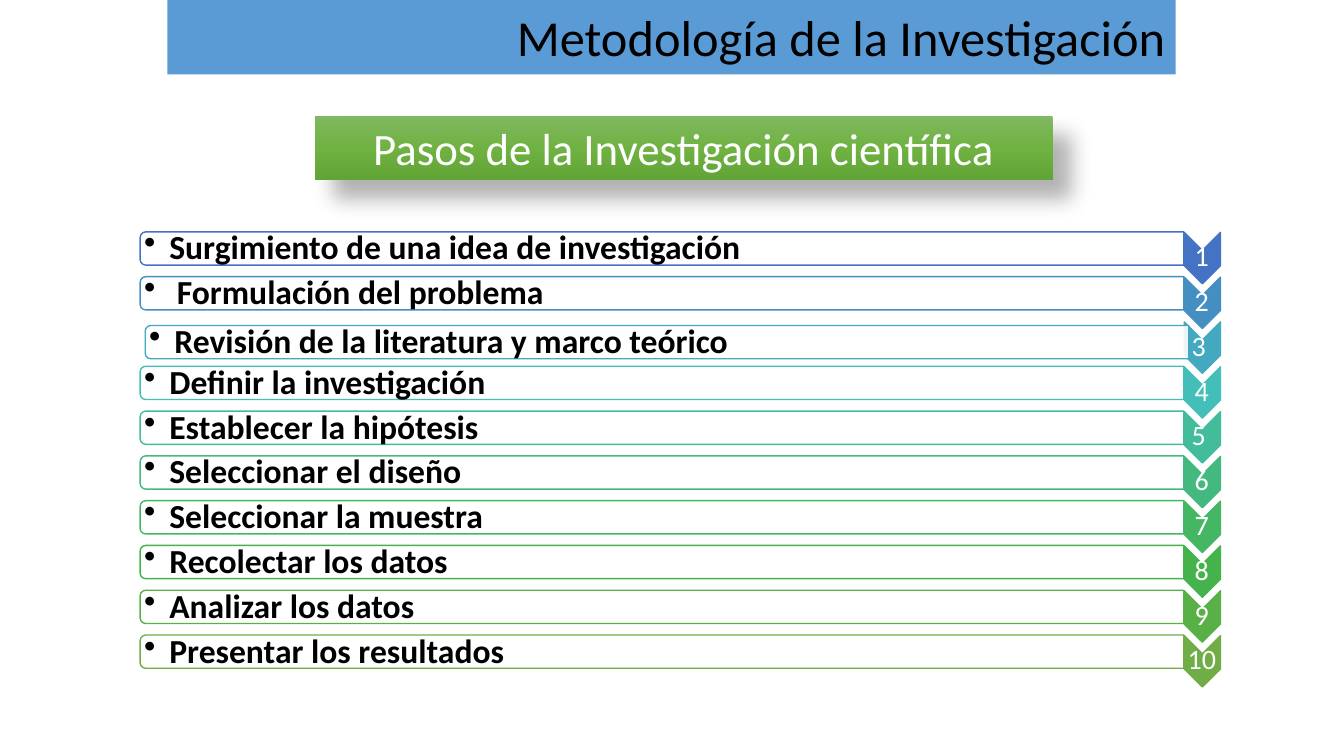
from lxml.etree import SubElement
from pptx import Presentation
from pptx.dml.color import RGBColor
from pptx.enum.shapes import MSO_SHAPE
from pptx.enum.text import MSO_ANCHOR, PP_ALIGN
from pptx.oxml import parse_xml
from pptx.oxml.ns import nsdecls, qn
from pptx.util import Inches, Pt


def color(code):
    return RGBColor.from_string(code)


class Deck:
    font = "Calibri"

    def __init__(self, wide, high):
        self.prs = Presentation()
        self.prs.slide_width = Inches(wide)
        self.prs.slide_height = Inches(high)
        self.slide = self.prs.slides.add_slide(self.prs.slide_layouts[6])

    def shape(self, kind, box, fill, line=None, turn=0, alpha=None):
        item = self.slide.shapes.add_shape(kind, *map(Inches, box))
        item.shadow.inherit = False
        item.rotation = turn
        item.fill.solid()
        item.fill.fore_color.rgb = color(fill)
        if alpha:
            tint = item.fill._xPr.find(qn("a:solidFill"))[0]
            SubElement(tint, qn("a:alpha"), val=str(alpha * 1000))
        if line:
            item.line.color.rgb = color(line)
            item.line.width = Pt(1)
        else:
            item.line.fill.background()
        return item

    def box(self, place, inset):
        item = self.slide.shapes.add_textbox(*map(Inches, place))
        frame = item.text_frame
        (frame.margin_left, frame.margin_top,
         frame.margin_right, frame.margin_bottom) = map(Inches, inset)
        return item

    def text(self, item, runs, size, ink, align, anchor=MSO_ANCHOR.MIDDLE):
        frame = item.text_frame
        frame.word_wrap = True
        frame.vertical_anchor = anchor
        para = frame.paragraphs[0]
        para.alignment = align
        for words, bold in runs:
            run = para.add_run()
            run.text = words
            run.font.name = self.font
            run.font.size = Pt(size)
            run.font.bold = bold
            run.font.color.rgb = color(ink)
        return para

    def bullet(self, para):
        para.level = 1
        props = para._p.get_or_add_pPr()
        props.set("marL", str(Inches(0.25)))
        props.set("indent", str(Inches(-0.25)))
        SubElement(props, qn("a:buChar"), char="•")

    def blend(self, item, stops):
        marks = "".join(f'<a:gs pos="{pos * 1000}"><a:srgbClr val="{code}"/></a:gs>'
                        for pos, code in stops)
        props = item._element.spPr
        props.replace(props.find(qn("a:solidFill")), parse_xml(
            f'<a:gradFill {nsdecls("a")}><a:gsLst>{marks}</a:gsLst>'
            '<a:lin ang="5400000" scaled="0"/></a:gradFill>'))

    def shade(self, item, blur, dist, alpha):
        cast = SubElement(item._element.spPr.find(qn("a:effectLst")), qn("a:outerShdw"),
                          blurRad=str(Pt(blur)), dist=str(Pt(dist)), dir="2700000",
                          algn="tl", rotWithShape="0")
        tint = SubElement(cast, qn("a:srgbClr"), val="000000")
        SubElement(tint, qn("a:alpha"), val=str(alpha * 1000))

    def step(self, top, mark, runs, hue, shift):
        # Numbered chevron
        self.shape(MSO_SHAPE.CHEVRON, (11.67, top, 0.51, 0.36), hue, hue, 90)
        tag = self.box((11.74, top + 0.1, 0.36, 0.15), [0.01] * 4)
        self.text(tag, [(mark, False)], 20, "FFFFFF", PP_ALIGN.CENTER).line_spacing = 0.9
        # Bar with its bulleted label
        left, down = shift
        self.shape(MSO_SHAPE.ROUND_2_SAME_RECTANGLE,
                   (6.4 + left, top - 5.09 + down, 0.33, 10.35), "FFFFFF", hue, 270, 90)
        label = self.box((1.41 + left, top - 0.06 + down, 10.34, 0.3),
                         (0.02, 0.02, 0.19, 0.02))
        para = self.text(label, runs, 24, "000000", PP_ALIGN.LEFT)
        para.line_spacing = 0.9
        self.bullet(para)


STEPS = [
    ("1", "Surgimiento de una idea de investigación", "4472C4"),
    ("2", "Formulación del problema", "448EC2"),
    ("3 ", "Revisión de la literatura y marco teórico", "43A9C0"),
    ("4", "Definir la investigación", "43BEB9"),
    ("5 ", "Establecer la hipótesis", "43BC9C"),
    ("6", "Seleccionar el diseño", "44B97F"),
    ("7", "Seleccionar la muestra", "45B664"),
    ("8", "Recolectar los datos", "45B34B"),
    ("9", "Analizar los datos", "59B046"),
    ("10", "Presentar los resultados", "70AD47"),
]
FIRST, LAST = 2.38, 6.38


def main():
    deck = Deck(13.33, 7.5)

    # Course banner
    banner = deck.shape(MSO_SHAPE.RECTANGLE, (1.66, -0.02, 10, 0.76), "5B9BD5")
    deck.text(banner, [("Metodología de la Investigación", False)], 36, "000000",
              PP_ALIGN.RIGHT)

    # Topic heading
    topic = deck.shape(MSO_SHAPE.RECTANGLE, (3.12, 1.15, 7.32, 0.64), "6FB242")
    deck.blend(topic, [(0, "81B861"), (50, "6FB242"), (100, "62A336")])
    deck.shade(topic, 15, 18, 30)
    deck.text(topic, [("Pasos de la Investigación científica", False)], 32, "FFFFFF",
              PP_ALIGN.CENTER, MSO_ANCHOR.TOP)

    # Ten steps; the third bar sits slightly off the grid
    pitch = (LAST - FIRST) / (len(STEPS) - 1)
    for row, (mark, words, hue) in enumerate(STEPS):
        runs = [(words, True)]
        if row == 1:
            runs.insert(0, (" ", False))
        shift = (0.05, 0.04) if row == 2 else (0, 0)
        deck.step(FIRST + row * pitch, mark, runs, hue, shift)

    deck.prs.save("out.pptx")


if __name__ == "__main__":
    main()
